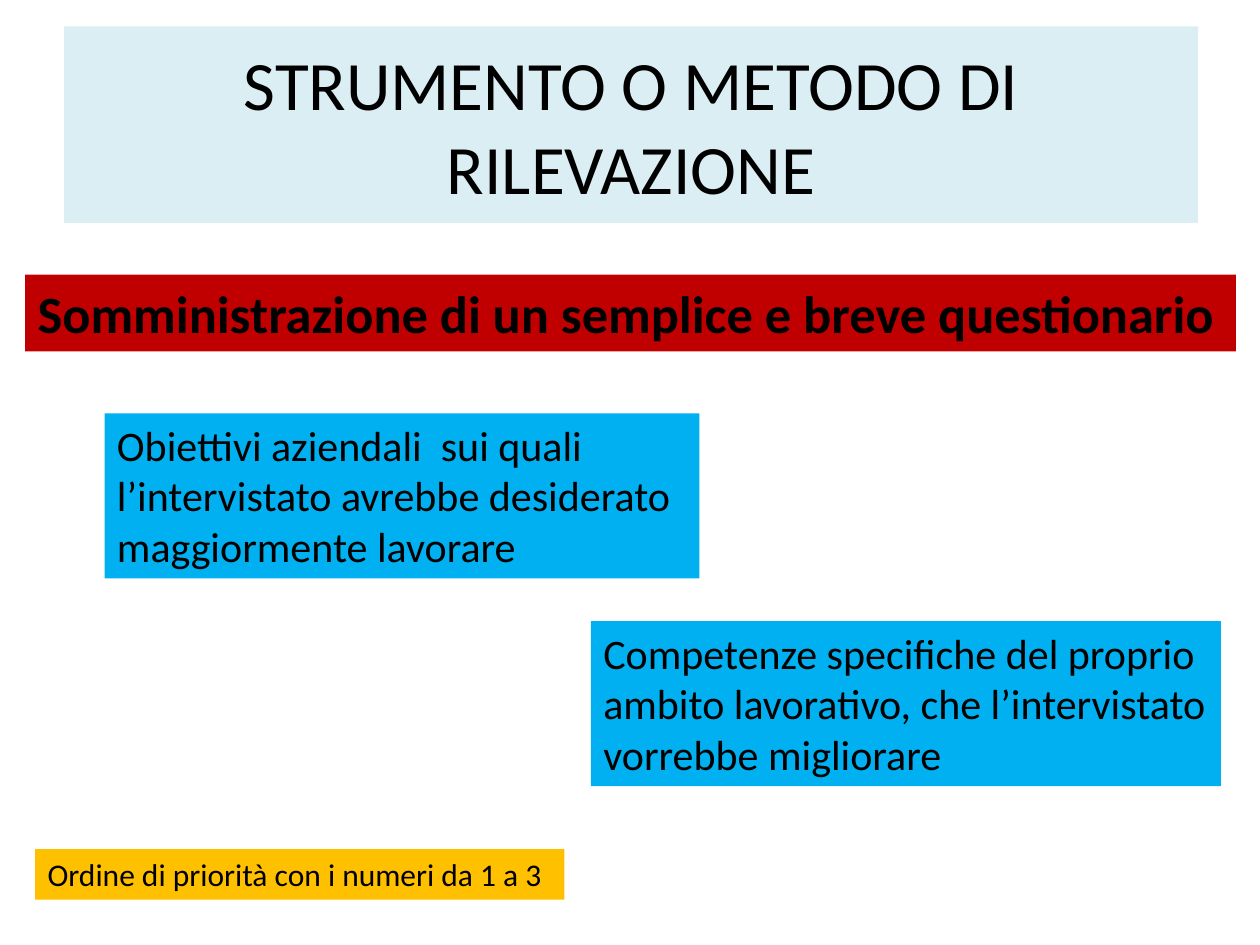
"""Build the slide on the survey tool and its questions."""
from typing import NamedTuple

from pptx import Presentation
from pptx.dml.color import RGBColor as Rgb
from pptx.enum.text import MSO_ANCHOR as Anchor, MSO_AUTO_SIZE as Fit, PP_ALIGN as Align
from pptx.util import Inches, Pt

HUES = {"ink": "000000", "pale": "DBEEF4", "red": "C00000", "blue": "00B0F0", "gold": "FFC000"}


class Box(NamedTuple):
    text: str
    left: float
    top: float
    width: float
    height: float
    hue: str
    size: float
    bold: bool = False
    wrap: bool = True


TITLE = Box("STRUMENTO O METODO DI RILEVAZIONE", 0.51, 0.21, 9, 1.56, "pale", 39.6)
BOXES = [
    Box("Somministrazione di un semplice e breve questionario",
        0.2, 2.18, 9.61, 0.61, "red", 30, bold=True),
    Box("Obiettivi aziendali  sui quali l’intervistato avrebbe desiderato maggiormente lavorare",
        0.83, 3.28, 4.72, 1.31, "blue", 24),
    Box("Competenze specifiche del proprio ambito lavorativo, che l’intervistato vorrebbe migliorare",
        4.69, 4.93, 5, 1.31, "blue", 24),
    Box("Ordine di priorità con i numeri da 1 a 3",
        0.28, 6.74, 4.2, 0.4, "gold", 18, wrap=False),
]


def write(frame, text: str, *, size: float, bold: bool = False, wrap: bool = True,
          align=Align.LEFT, anchor=Anchor.TOP, fit=Fit.SHAPE_TO_FIT_TEXT) -> None:
    frame.text = text
    frame.word_wrap = wrap
    frame.auto_size = fit
    frame.vertical_anchor = anchor
    line = frame.paragraphs[0]
    line.alignment = align
    font = line.runs[0].font
    font.name, font.size, font.bold = "Calibri", Pt(size), bold
    font.color.rgb = Rgb.from_string(HUES["ink"])


def paint(shape, hue: str) -> None:
    shape.fill.solid()
    shape.fill.fore_color.rgb = Rgb.from_string(HUES[hue])


def place(box: Box) -> tuple:
    return tuple(Inches(n) for n in (box.left, box.top, box.width, box.height))


def draw(slide, box: Box) -> None:
    shape = slide.shapes.add_textbox(*place(box))
    paint(shape, box.hue)
    write(shape.text_frame, box.text, size=box.size, bold=box.bold, wrap=box.wrap)


def main() -> None:
    deck = Presentation()
    deck.slide_width, deck.slide_height = Inches(10), Inches(7.5)
    slide = deck.slides.add_slide(deck.slide_layouts[5])
    title = slide.shapes.title
    title.left, title.top, title.width, title.height = place(TITLE)
    paint(title, TITLE.hue)
    write(title.text_frame, TITLE.text, size=TITLE.size, align=Align.CENTER,
          anchor=Anchor.MIDDLE, fit=Fit.NONE)
    for box in BOXES:
        draw(slide, box)
    deck.save("out.pptx")


if __name__ == "__main__":
    main()
